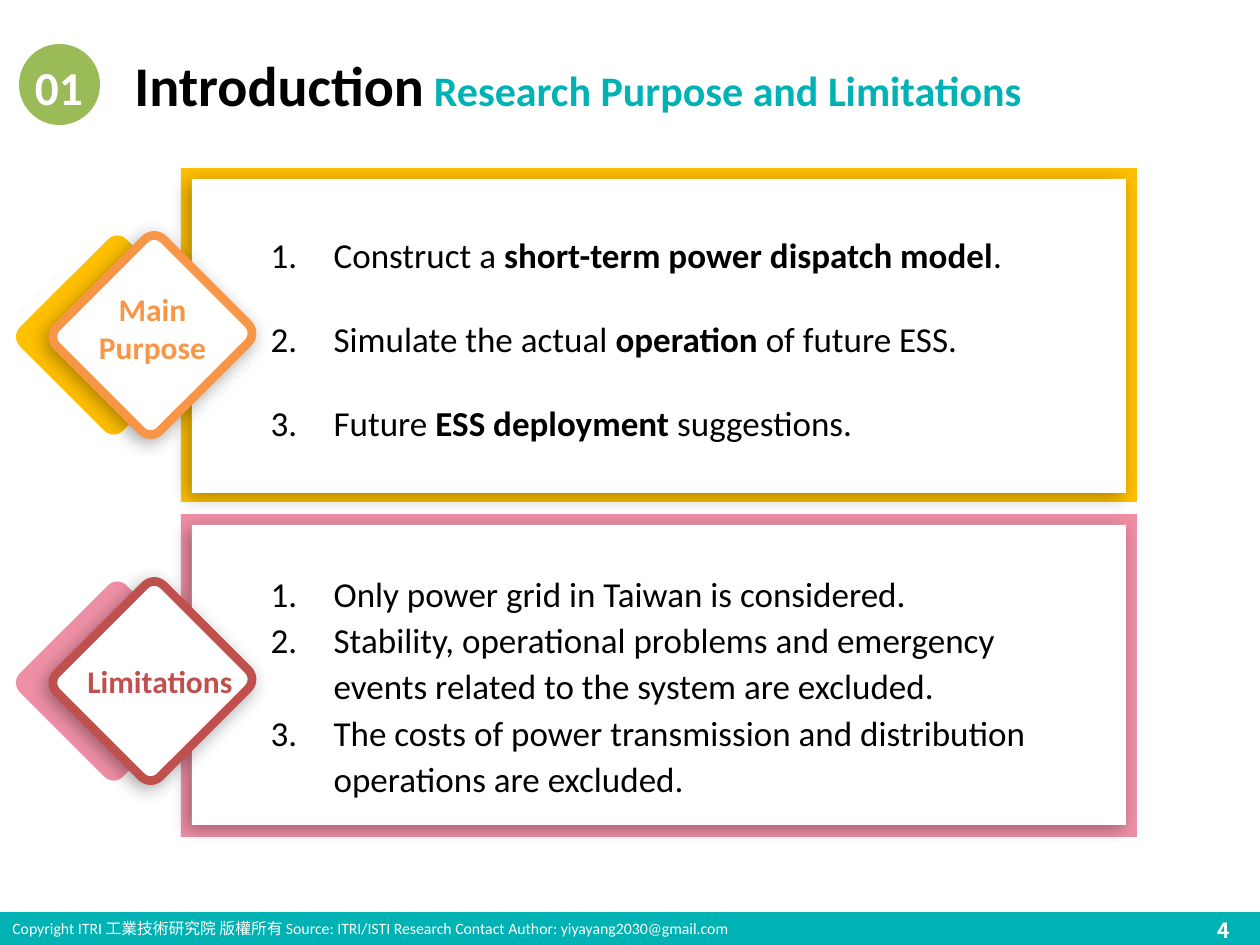
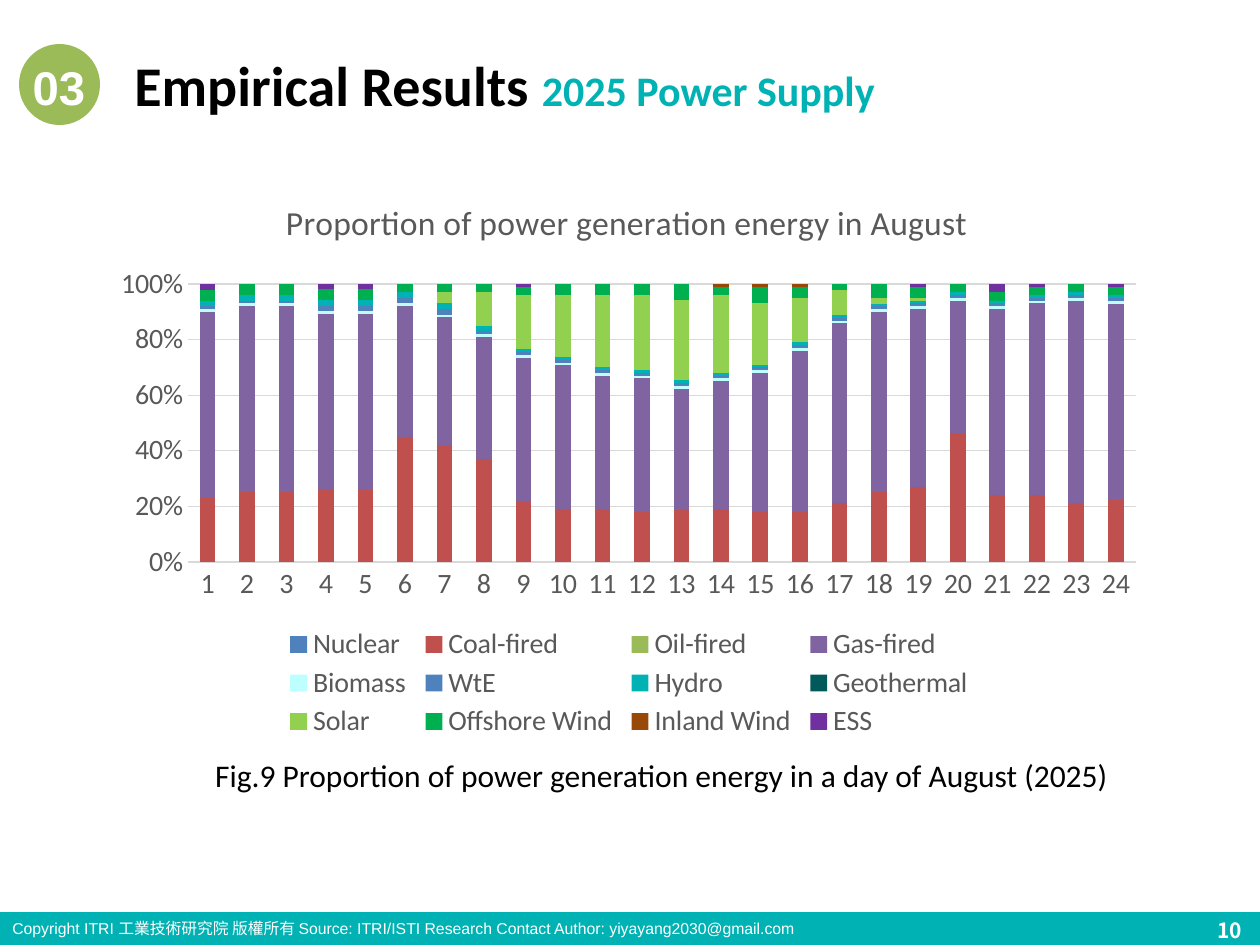
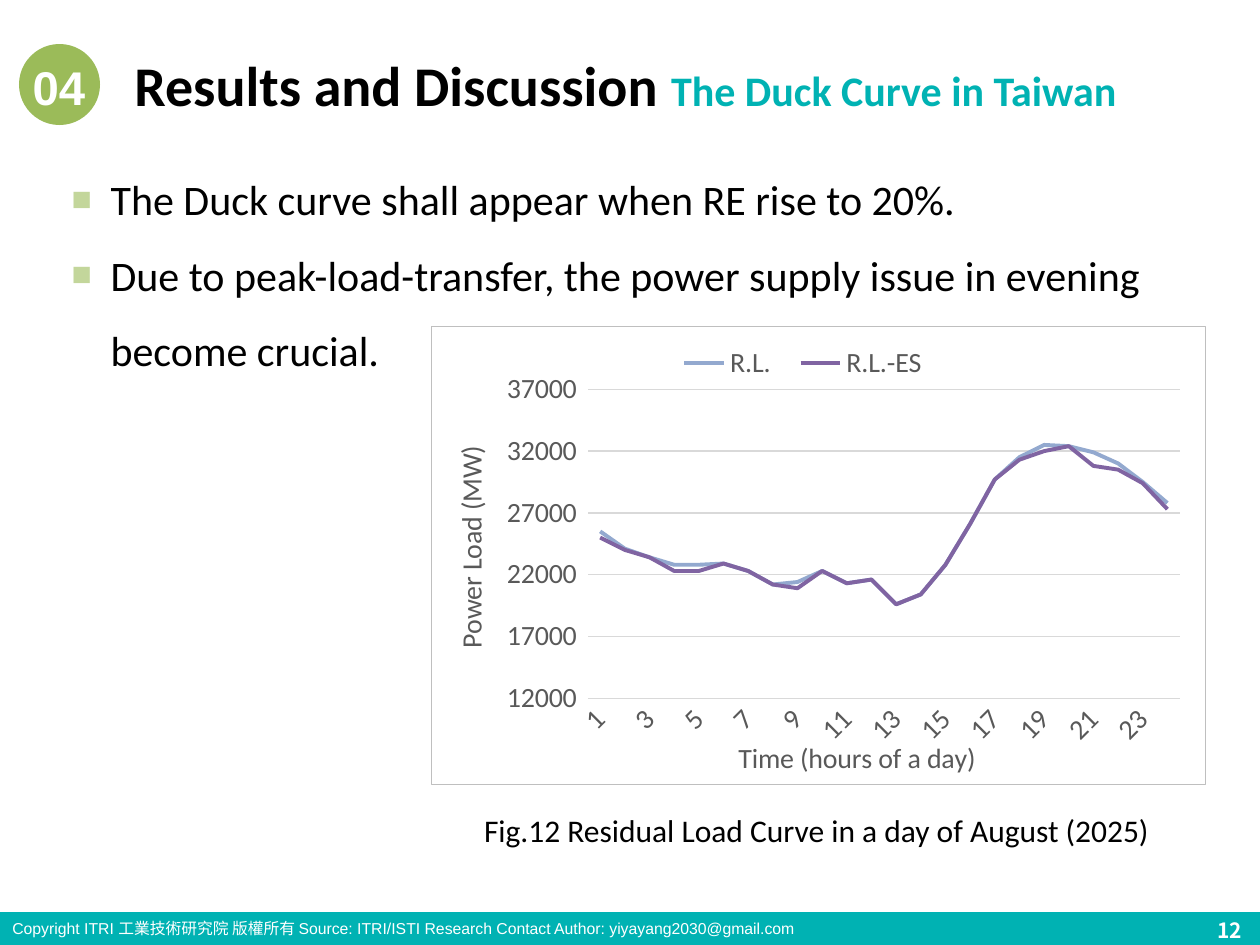
"""Build three slides on power dispatch, supply shares and residual load."""
from lxml import etree
from pptx import Presentation
from pptx import util as u
from pptx.chart.data import CategoryChartData
from pptx.dml.color import RGBColor
from pptx.enum import chart as ch
from pptx.enum import shapes, text
from pptx.oxml import parse_xml
from pptx.oxml.ns import nsdecls, qn

PX = 914400 / 126
TEAL = RGBColor(0x00, 0xB2, 0xB3)
GREEN = RGBColor(0x9B, 0xBB, 0x59)
WHITE = RGBColor(0xFF, 0xFF, 0xFF)
BLACK = RGBColor(0x00, 0x00, 0x00)
GRAY = RGBColor(0x59, 0x59, 0x59)
PALE = RGBColor(0xD9, 0xD9, 0xD9)
EDGE = RGBColor(0xBF, 0xBF, 0xBF)
GOLD = RGBColor(0xFF, 0xC0, 0x00)
ORANGE = RGBColor(0xF7, 0x96, 0x46)
PINK = RGBColor(0xEF, 0x8F, 0xA6)
RED = RGBColor(0xC0, 0x50, 0x4D)
BLUE = RGBColor(0x4F, 0x81, 0xBD)
MIST = RGBColor(0x93, 0xA9, 0xCF)
PURPLE = RGBColor(0x80, 0x64, 0xA2)
ICE = RGBColor(0xBD, 0xFF, 0xFF)
DEEP = RGBColor(0x00, 0x59, 0x5A)
LIME = RGBColor(0x92, 0xD0, 0x50)
LEAF = RGBColor(0x00, 0xB0, 0x50)
BROWN = RGBColor(0x98, 0x48, 0x07)
VIOLET = RGBColor(0x70, 0x30, 0xA0)

FOOT = ("Copyright ITRI 工業技術研究院 版權所有 Source: ITRI/ISTI Research "
        "Contact Author: yiyayang2030@gmail.com")
HEADS = [
    ("01", "Introduction", "Research Purpose and Limitations", "4", "Calibri", 3),
    ("03", "Empirical Results", "2025 Power Supply", "10", "Arial", 5),
    ("04", "Results and Discussion", "The Duck Curve in Taiwan", "12", "Arial", 1),
]
PANELS = [
    dict(top=168, high=334, inner=314, fill=GOLD, tone=ORANGE,
         label="Main Purpose", tag=(75, 284, 155, 89),
         area=(258, 227, 851, 224), gap=12, pitch=1.0,
         items=[[("Construct a ", False), ("short-term power dispatch model", True),
                 (".", False)],
                [("Simulate the actual ", False), ("operation ", True),
                 ("of future ESS.", False)],
                [("Future ", False), ("ESS deployment", True),
                 (" suggestions.", False)]]),
    dict(top=514, high=323, inner=300, fill=PINK, tone=RED,
         label="Limitations", tag=(53, 656, 214, 50),
         area=(258, 562, 825, 246), gap=0, pitch=1.1,
         items=[[("Only power grid in Taiwan is considered.", False)],
                [("Stability, operational problems and emergency events related "
                  "to the system are excluded.", False)],
                [("The costs of power transmission and distribution operations "
                  "are excluded.", False)]]),
]
POINTS = [
    "The Duck curve shall appear when RE rise to 20%.",
    "Due to peak-load-transfer, the power supply issue in evening become crucial.",
]
HOURS = [str(n) for n in range(1, 25)]
NONE = [0] * 24
SHARES = [
    ("Nuclear", BLUE, NONE),
    ("Coal-fired", RED, [23, 25, 25, 26, 26, 45, 42, 37, 21, 19, 19, 18,
                         19, 19, 18, 18, 21, 25, 27, 46, 24, 24, 21, 22]),
    ("Oil-fired", GREEN, NONE),
    ("Gas-fired", PURPLE, [67, 67, 67, 64, 64, 47, 46, 44, 51, 51, 48, 48,
                           44, 46, 50, 58, 64, 64, 64, 47, 67, 69, 72, 70]),
    ("Biomass", ICE, [1] * 24),
    ("WtE", BLUE, [1] * 3 + [2] * 4 + [1] * 17),
    ("Hydro", TEAL, [2] * 8 + [1] * 16),
    ("Geothermal", DEEP, NONE),
    ("Solar", LIME, [0, 0, 0, 0, 0, 0, 4, 12, 19, 22, 26, 27,
                     29, 28, 22, 16, 9, 2, 1, 0, 0, 0, 0, 0]),
    ("Offshore Wind", LEAF, [4, 4, 4, 4, 4, 3, 3, 3, 3, 4, 4, 4,
                             6, 3, 6, 4, 2, 5, 4, 3, 3, 3, 3, 3]),
    ("Inland Wind", BROWN, [0] * 13 + [1] * 3 + [0] * 8),
    ("ESS", VIOLET, [2, 0, 0, 2, 2, 0, 0, 0, 1, 0, 0, 0,
                     0, 0, 0, 0, 0, 0, 1, 0, 3, 1, 0, 1]),
]
LOADS = [
    ("R.L.", MIST, [25500, 24100, 23400, 22800, 22800, 22900, 22300, 21200,
                    21400, 22300, 21300, 21600, 19600, 20400, 22800, 26100,
                    29700, 31500, 32500, 32400, 31900, 31000, 29500, 27800]),
    ("R.L.-ES", PURPLE, [25000, 24000, 23400, 22300, 22300, 22900, 22300, 21200,
                         20900, 22300, 21300, 21600, 19600, 20400, 22800, 26100,
                         29700, 31300, 32000, 32400, 30800, 30500, 29400, 27300]),
]


def emu(box):
    return [u.Emu(round(n * PX)) for n in box]


def write(par, words, size, color, bold=False, font="Calibri"):
    run = par.add_run()
    run.text = words
    run.font.size = u.Pt(size)
    run.font.bold = bold
    run.font.name = font
    run.font.color.rgb = color


def label(slide, box, words, size, color, bold=False, font="Calibri", center=True):
    frame = slide.shapes.add_textbox(*emu(box)).text_frame
    frame.word_wrap = True
    par = frame.paragraphs[0]
    par.alignment = text.PP_ALIGN.CENTER if center else text.PP_ALIGN.LEFT
    write(par, words, size, color, bold, font)
    return par


def shape(slide, kind, box, fill, line=None, width=0.75, shade=False):
    item = slide.shapes.add_shape(kind, *emu(box))
    item.shadow.inherit = False
    item.fill.solid()
    item.fill.fore_color.rgb = fill
    if line is None:
        item.line.fill.background()
    else:
        item.line.color.rgb = line
        item.line.width = u.Pt(width)
    if shade:
        item._element.spPr.find(qn("a:effectLst")).append(parse_xml(
            f'<a:outerShdw {nsdecls("a")} blurRad="127000" dist="38100" '
            'dir="8100000" algn="tr" rotWithShape="0"><a:srgbClr val="000000">'
            '<a:alpha val="33000"/></a:srgbClr></a:outerShdw>'))
    return item


def settle(item, box):
    item.left, item.top, item.width, item.height = emu(box)
    frame = item.text_frame
    frame.auto_size = text.MSO_AUTO_SIZE.NONE
    frame.vertical_anchor = text.MSO_ANCHOR.TOP
    return frame


def fill_list(item, box, rows, size, color, indent, pitch, gap, marks):
    frame = settle(item, box)
    for i, row in enumerate(rows):
        par = frame.paragraphs[0] if i == 0 else frame.add_paragraph()
        par.line_spacing = pitch
        par.space_before = u.Pt(gap if i else 0)
        par.space_after = u.Pt(gap)
        props = par._p.get_or_add_pPr()
        props.set("marL", str(round(indent * PX)))
        props.set("indent", str(-round(indent * PX)))
        for tag, traits in marks:
            mark = etree.SubElement(props, qn(tag), traits)
            if tag == "a:buClr":
                etree.SubElement(mark, qn("a:srgbClr"), {"val": "C3D69B"})
        for words, bold in row:
            write(par, words, size, color, bold)


def begin(deck, num, head, sub, page, font, layout):
    slide = deck.slides.add_slide(deck.slide_layouts[layout])
    shape(slide, shapes.MSO_SHAPE.OVAL, (19, 44, 81, 81), GREEN)
    label(slide, (9, 52, 100, 71), num, 27, WHITE, True, font)
    frame = settle(slide.shapes.title, (123, 44, 1108, 81))
    frame.margin_left = frame.margin_right = u.Inches(0.09)
    par = frame.paragraphs[0]
    par.alignment = text.PP_ALIGN.LEFT
    write(par, head, 32, BLACK, True)
    write(par, " ", 24 if num == "01" else 32, BLACK, True)
    write(par, sub, 24, TEAL, True)
    label(slide, (0, 913, 1068, 32), FOOT, 9, WHITE, False, font, False)
    label(slide, (1205, 911, 54, 38), page, 12, WHITE, True,
          "Noto Sans CJK SC", False)
    return slide


def add_band(deck, slide):
    band = shape(slide, shapes.MSO_SHAPE.RECTANGLE, (0, 912, 1260, 33), TEAL)
    deck.slide_master.shapes._spTree.append(band._element)


def add_panel(slide, spec, body):
    top, fill = spec["top"], spec["fill"]
    rect, soft = shapes.MSO_SHAPE.RECTANGLE, shapes.MSO_SHAPE.ROUNDED_RECTANGLE
    shape(slide, rect, (181, top, 956, spec["high"]), fill)
    shape(slide, rect, (192, top + 11, 934, spec["inner"]), WHITE, shade=True)
    back = shape(slide, soft, (40, top + 94, 151, 146), fill)
    front = shape(slide, soft, (77, top + 94, 151, 146), WHITE,
                  spec["tone"], 5, True)
    for item in (back, front):
        item.rotation = 315
        item.adjustments[0] = 0.09
    slide.shapes._spTree.append(body._element)
    fill_list(body, spec["area"], spec["items"], 20, BLACK, 63, spec["pitch"],
              spec["gap"], [("a:buFont", {"typeface": "+mj-lt"}),
                            ("a:buAutoNum", {"type": "arabicPeriod"})])
    label(slide, spec["tag"], spec["label"], 18, spec["tone"], True)


def caption(slide, box, words):
    par = label(slide, box, words, 18, BLACK)
    par.space_after = u.Pt(10)
    par._p.get_or_add_pPr().set("indent", str(u.Inches(0.25)))


def place(node, index, spots, inner=False):
    old = node.find(qn("c:layout"))
    if old is not None:
        node.remove(old)
    layout = etree.Element(qn("c:layout"))
    manual = etree.SubElement(layout, qn("c:manualLayout"))
    parts = [("layoutTarget", "inner")] if inner else []
    parts += [("xMode", "edge"), ("yMode", "edge")]
    parts += list(zip("xywh", spots))
    for name, val in parts:
        etree.SubElement(manual, qn("c:" + name), {"val": str(val)})
    node.insert(index, layout)


def name_it(title, words, size, spots):
    write(title.text_frame.paragraphs[0], words, size, GRAY)
    place(title._element, 1, spots)


def add_plot(slide, kind, box, rows, plot, key):
    data = CategoryChartData()
    data.categories = HOURS
    for name, _, vals in rows:
        data.add_series(name, vals)
    chart = slide.shapes.add_chart(kind, *emu(box), data).chart
    chart.has_title = False
    chart.font.size = u.Pt(16)
    chart.font.name = "Calibri"
    chart.font.color.rgb = GRAY
    chart.plots[0].vary_by_categories = False
    cat, val = chart.category_axis, chart.value_axis
    for axis in (cat, val):
        axis.major_tick_mark = axis.minor_tick_mark = ch.XL_TICK_MARK.NONE
        axis.tick_labels.font.size = u.Pt(16)
        axis.tick_labels.font.color.rgb = GRAY
    val.has_major_gridlines = True
    for line in (cat.format.line, val.major_gridlines.format.line):
        line.color.rgb = PALE
        line.width = u.Pt(0.75)
    val.format.line.fill.background()
    chart.has_legend = True
    chart.legend.include_in_layout = False
    chart.legend.position = ch.XL_LEGEND_POSITION.BOTTOM
    chart.legend.font.size = u.Pt(16)
    chart.legend.font.color.rgb = GRAY
    place(chart.legend._element, 1, key)
    place(chart._chartSpace.chart.plotArea, 0, plot, True)
    return chart


def add_shares(slide):
    chart = add_plot(slide, ch.XL_CHART_TYPE.COLUMN_STACKED_100,
                     (100, 175, 1058, 571), SHARES,
                     (0.083, 0.191, 0.896, 0.487), (0.17, 0.785, 0.66, 0.21))
    chart.has_title = True
    name_it(chart.chart_title, "Proportion of power generation energy in August",
            19.2, (0.17, 0.03))
    bars = chart.plots[0]
    bars.gap_width, bars.overlap = 150, 100
    for ser, (_, color, _) in zip(bars.series, SHARES):
        ser.format.fill.solid()
        ser.format.fill.fore_color.rgb = color
    axis = chart.value_axis
    axis.major_unit = 0.2
    axis.tick_labels.number_format = "0%"
    axis.tick_labels.number_format_is_linked = False


def add_loads(slide):
    chart = add_plot(slide, ch.XL_CHART_TYPE.LINE, (431, 326, 775, 459), LOADS,
                     (0.202, 0.137, 0.765, 0.675), (0.3, 0.04, 0.36, 0.08))
    for ser, (_, color, _) in zip(chart.plots[0].series, LOADS):
        ser.smooth = False
        ser.format.line.color.rgb = color
        ser.format.line.width = u.Pt(2.25)
    cat, val = chart.category_axis, chart.value_axis
    val.minimum_scale, val.maximum_scale, val.major_unit = 12000, 37000, 5000
    val.tick_labels.number_format = "0_ "
    val.tick_labels.number_format_is_linked = False
    cat._element.find(qn("c:txPr")).find(qn("a:bodyPr")).set("rot", "-2700000")
    name_it(cat.axis_title, "Time (hours of a day)", 16, (0.39, 0.89))
    name_it(val.axis_title, "Power Load (MW)", 16, (0.02, 0.25))
    turn = val.axis_title.text_frame._txBody.find(qn("a:bodyPr"))
    turn.set("rot", "-5400000")
    turn.set("vert", "horz")
    chart._chartSpace.chart.addnext(parse_xml(
        f'<c:spPr {nsdecls("c", "a")}><a:noFill/><a:ln w="9525"><a:solidFill>'
        f'<a:srgbClr val="{EDGE}"/></a:solidFill></a:ln></c:spPr>'))


def main():
    deck = Presentation()
    deck.slide_width, deck.slide_height = u.Inches(10), u.Inches(7.5)
    intro, supply, duck = [begin(deck, *head) for head in HEADS]
    add_band(deck, intro)

    bodies = [item for item in intro.placeholders
              if item.placeholder_format.idx > 0]
    for spec, body in zip(PANELS, bodies):
        add_panel(intro, spec, body)

    add_shares(supply)
    caption(supply, (152, 750, 988, 50),
            "Fig.9 Proportion of power generation energy in a day of August (2025)")

    add_loads(duck)
    caption(duck, (372, 805, 858, 50),
            "Fig.12 Residual Load Curve in a day of August (2025)")
    fill_list(duck.placeholders[1], (59, 142, 1147, 242),
              [[(words, False)] for words in POINTS], 24, BLACK, 39, 1.5, 0,
              [("a:buClr", {}), ("a:buSzPct", {"val": "80000"}),
               ("a:buFont", {"typeface": "Arial"}), ("a:buChar", {"char": "■"})])
    deck.save("out.pptx")


if __name__ == "__main__":
    main()
